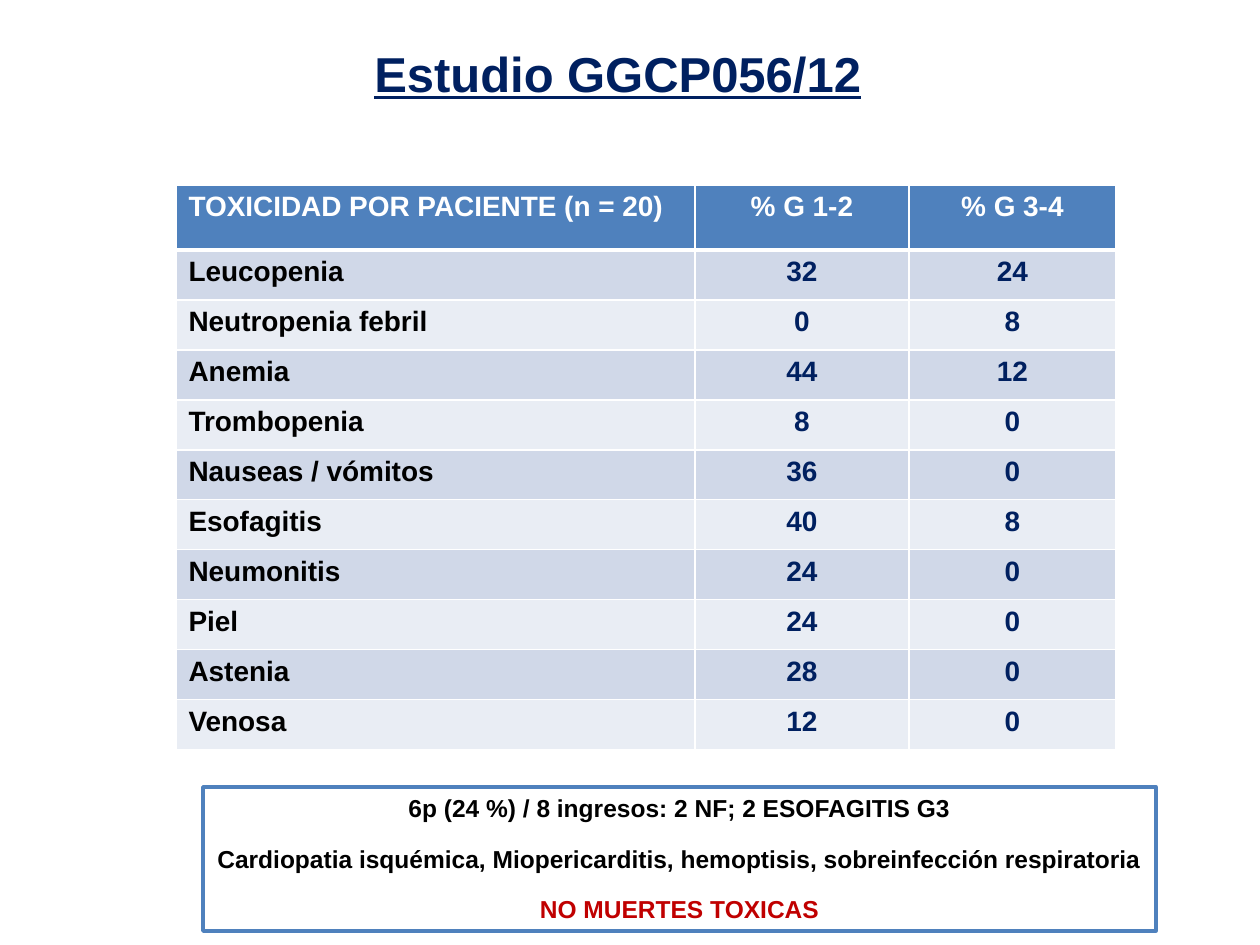
from dataclasses import dataclass

from lxml.etree import SubElement
from pptx import Presentation
from pptx.dml.color import RGBColor as RGB
from pptx.enum.shapes import MSO_SHAPE as SHAPE
from pptx.enum.text import MSO_ANCHOR as ANCHOR, MSO_AUTO_SIZE as AUTO, PP_ALIGN as ALIGN
from pptx.oxml.ns import qn
from pptx.util import Emu, Pt

EMU_PER_PX = 914400 / 126


def px(n):
    return Emu(round(n * EMU_PER_PX))


@dataclass(frozen=True)
class Theme:
    font: str = "Arial"
    navy: str = "002060"
    blue: str = "4F81BD"
    band_dark: str = "D0D8E8"
    band_light: str = "E9EDF4"
    white: str = "FFFFFF"
    black: str = "000000"
    red: str = "C00000"
    title_size: int = 28
    table_size: int = 16
    note_size: int = 14


class Deck:
    """Holds the theme and the current slide."""

    def __init__(self, theme):
        self.theme = theme
        self.prs = Presentation()
        self.prs.slide_width, self.prs.slide_height = px(1260), px(945)
        self.slide = self.prs.slides.add_slide(self.prs.slide_layouts[6])

    def set_text(self, p, text, size, color, align=ALIGN.LEFT):
        p.text, p.alignment = text, align
        f = p.font
        f.name, f.size, f.bold = self.theme.font, Pt(size), True
        f.color.rgb = RGB.from_string(color)

    def title(self, text, x, y, w, h):
        tf = self.slide.shapes.add_textbox(px(x), px(y), px(w), px(h)).text_frame
        tf.word_wrap, tf.auto_size = False, AUTO.SHAPE_TO_FIT_TEXT
        self.set_text(tf.paragraphs[0], text, self.theme.title_size, self.theme.navy)
        tf.paragraphs[0].font.underline = True

    def border(self, cell, bottom):
        tc_pr = cell._tc.get_or_add_tcPr()
        for side, width in (("L", 1), ("R", 1), ("T", 1), ("B", bottom)):
            ln = SubElement(tc_pr, qn(f"a:ln{side}"), w=str(Pt(width)))
            fill = SubElement(ln, qn("a:solidFill"))
            SubElement(fill, qn("a:srgbClr"), val=self.theme.white)

    def table(self, rows, x, y, col_widths, header_height, row_height):
        t = self.theme
        heights = [header_height] + [row_height] * (len(rows) - 1)
        table = self.slide.shapes.add_table(
            len(rows), len(col_widths), px(x), px(y),
            px(sum(col_widths)), px(sum(heights))).table
        for col, width in zip(table.columns, col_widths):
            col.width = px(width)
        for i, (values, height) in enumerate(zip(rows, heights)):
            table.rows[i].height = px(height)
            header = i == 0
            band = t.blue if header else t.band_dark if i % 2 else t.band_light
            for j, value in enumerate(values):
                cell = table.cell(i, j)
                self.border(cell, bottom=3 if header else 1)
                cell.fill.solid()
                cell.fill.fore_color.rgb = RGB.from_string(band)
                color = t.white if header else t.navy if j else t.black
                self.set_text(cell.text_frame.paragraphs[0], str(value), t.table_size,
                              color, ALIGN.CENTER if j else ALIGN.LEFT)

    def note(self, lines, x, y, w, h):
        t = self.theme
        sp = self.slide.shapes.add_shape(SHAPE.RECTANGLE, px(x), px(y), px(w), px(h))
        sp.shadow.inherit = False
        sp.fill.solid()
        sp.fill.fore_color.rgb = RGB.from_string(t.white)
        sp.line.color.rgb = RGB.from_string(t.blue)
        sp.line.width = Pt(2)
        tf = sp.text_frame
        tf.word_wrap, tf.auto_size = True, AUTO.SHAPE_TO_FIT_TEXT
        tf.vertical_anchor = ANCHOR.TOP
        for i, (text, color) in enumerate(lines):
            p = tf.add_paragraph() if i else tf.paragraphs[0]
            self.set_text(p, text, t.note_size, color, ALIGN.CENTER)
            p.space_before = p.space_after = Pt(6)


TOXICITY = [
    ("TOXICIDAD POR PACIENTE (n = 20)", "% G 1-2", "% G 3-4"),
    ("Leucopenia", 32, 24),
    ("Neutropenia febril", 0, 8),
    ("Anemia", 44, 12),
    ("Trombopenia", 8, 0),
    ("Nauseas / vómitos", 36, 0),
    ("Esofagitis", 40, 8),
    ("Neumonitis", 24, 0),
    ("Piel", 24, 0),
    ("Astenia", 28, 0),
    ("Venosa", 12, 0),
]


def main():
    theme = Theme()
    deck = Deck(theme)

    # Toxicity table
    deck.table(TOXICITY, 176, 185, col_widths=(519, 214, 207),
               header_height=65, row_height=50)

    # Admissions and outcome
    deck.note([
        ("6p (24 %) / 8 ingresos: 2 NF; 2 ESOFAGITIS G3", theme.black),
        ("Cardiopatia isquémica, Miopericarditis, hemoptisis, sobreinfección respiratoria",
         theme.black),
        ("NO MUERTES TOXICAS", theme.red),
    ], 203, 787, 953, 144)

    # Title
    deck.title("Estudio GGCP056/12", 362, 37, 518, 72)

    deck.prs.save("out.pptx")


if __name__ == "__main__":
    main()
